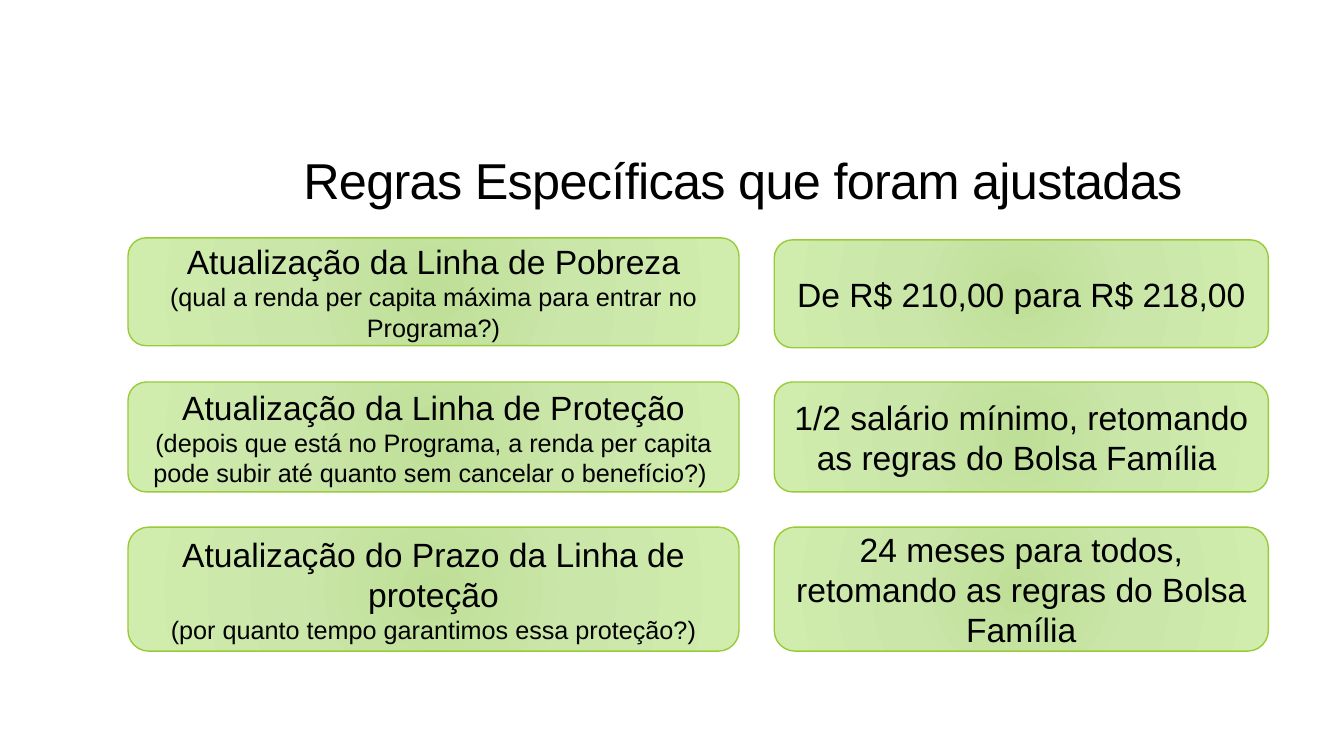
"""Build the slide on the adjusted rules of the programme."""
import dataclasses
import typing

import pptx
import pptx.dml.color
import pptx.enum.shapes
import pptx.enum.text
import pptx.oxml
import pptx.oxml.ns
import pptx.util

COLORS = {
    "text": "000000",
    "outline": "99CB38",
    "center": "BEDF97",
    "middle": "CAE6A9",
    "edge": "D0EDAE",
}
GRADIENT_STOPS = {"center": 0, "middle": 45, "edge": 100}
FONT = "Arial"
HEADING_SIZE, DETAIL_SIZE = 24, 18
RULE_LEFT, RULE_WIDTH = 1.27, 6.06
CHANGE_LEFT, CHANGE_WIDTH = 7.68, 4.9


@dataclasses.dataclass(frozen=True)
class Span:
    text: str
    size: float = HEADING_SIZE


Paragraphs = list[list[Span]]


@dataclasses.dataclass(frozen=True)
class Row:
    rule_top: float
    change_top: float
    height: float
    rule: Paragraphs
    change: str


ROWS = [
    Row(2.36, 2.38, 1.07,
        [[Span("Atualização da Linha de Pobreza")],
         [Span("(qual a renda per capita máxima para entrar no Programa?)", DETAIL_SIZE)]],
        "De R$ 210,00 para R$ 218,00"),
    Row(3.79, 3.79, 1.09,
        [[Span("Atualização da Linha de Proteção "),
          Span("(depois que está no Programa, a renda per capita pode subir até "
               "quanto sem cancelar o benefício?) ", DETAIL_SIZE)]],
        "1/2 salário mínimo, retomando as regras do Bolsa Família "),
    Row(5.23, 5.23, 1.23,
        [[Span("Atualização do Prazo da Linha de proteção")],
         [Span("(por quanto tempo garantimos essa proteção?)", DETAIL_SIZE)]],
        "24 meses para todos, retomando as regras do Bolsa Família"),
]


def color(name: str) -> pptx.dml.color.RGBColor:
    return pptx.dml.color.RGBColor.from_string(COLORS[name])


def set_format(target: typing.Any, values: dict[str, typing.Any]) -> None:
    for name, value in values.items():
        setattr(target, name, value)


def write_text(shape: typing.Any, paragraphs: Paragraphs, anchor: typing.Any,
               paragraph_format: dict[str, typing.Any]) -> None:
    frame = shape.text_frame
    set_format(frame, {"word_wrap": True, "vertical_anchor": anchor})
    for index, spans in enumerate(paragraphs):
        para = frame.add_paragraph() if index else frame.paragraphs[0]
        set_format(para, paragraph_format)
        for span in spans:
            run = para.add_run()
            run.text = span.text
            set_format(run.font, {"name": FONT, "size": pptx.util.Pt(span.size)})
            run.font.color.rgb = color("text")


def add_gradient(shape: typing.Any) -> None:
    stops = "".join(
        f'<a:gs pos="{position * 1000}"><a:srgbClr val="{COLORS[name]}"/></a:gs>'
        for name, position in GRADIENT_STOPS.items())
    shape.element.spPr.append(pptx.oxml.parse_xml(
        f'<a:gradFill {pptx.oxml.ns.nsdecls("a")} rotWithShape="1">'
        f'<a:gsLst>{stops}</a:gsLst><a:path path="circle">'
        '<a:fillToRect l="100000" t="100000" r="100000" b="100000"/>'
        '</a:path></a:gradFill>'))


def add_box(page: typing.Any, left: float, top: float, width: float,
            height: float, paragraphs: Paragraphs) -> None:
    box = page.shapes.add_shape(
        pptx.enum.shapes.MSO_SHAPE.ROUNDED_RECTANGLE,
        *map(pptx.util.Inches, (left, top, width, height)))
    add_gradient(box)
    box.line.color.rgb = color("outline")
    box.line.width = pptx.util.Pt(1)
    box.shadow.inherit = False
    write_text(box, paragraphs, pptx.enum.text.MSO_ANCHOR.MIDDLE,
               {"alignment": pptx.enum.text.PP_ALIGN.CENTER})


def add_title(page: typing.Any) -> None:
    title = page.shapes.add_textbox(*map(pptx.util.Inches, (2.91, 1.47, 8.97, 0.66)))
    write_text(title, [[Span("Regras Específicas que foram ajustadas", 36)]],
               pptx.enum.text.MSO_ANCHOR.BOTTOM, {"line_spacing": 0.85})
    run = title.text_frame.paragraphs[0].runs[0]
    run.font._element.set("spc", "-50")


def main() -> None:
    deck = pptx.Presentation()
    set_format(deck, {"slide_width": pptx.util.Inches(13.33),
                      "slide_height": pptx.util.Inches(7.5)})
    page = deck.slides.add_slide(deck.slide_layouts[6])
    add_title(page)
    for row in ROWS:
        add_box(page, RULE_LEFT, row.rule_top, RULE_WIDTH, row.height, row.rule)
        add_box(page, CHANGE_LEFT, row.change_top, CHANGE_WIDTH, row.height,
                [[Span(row.change)]])
    deck.save("out.pptx")


if __name__ == "__main__":
    main()
